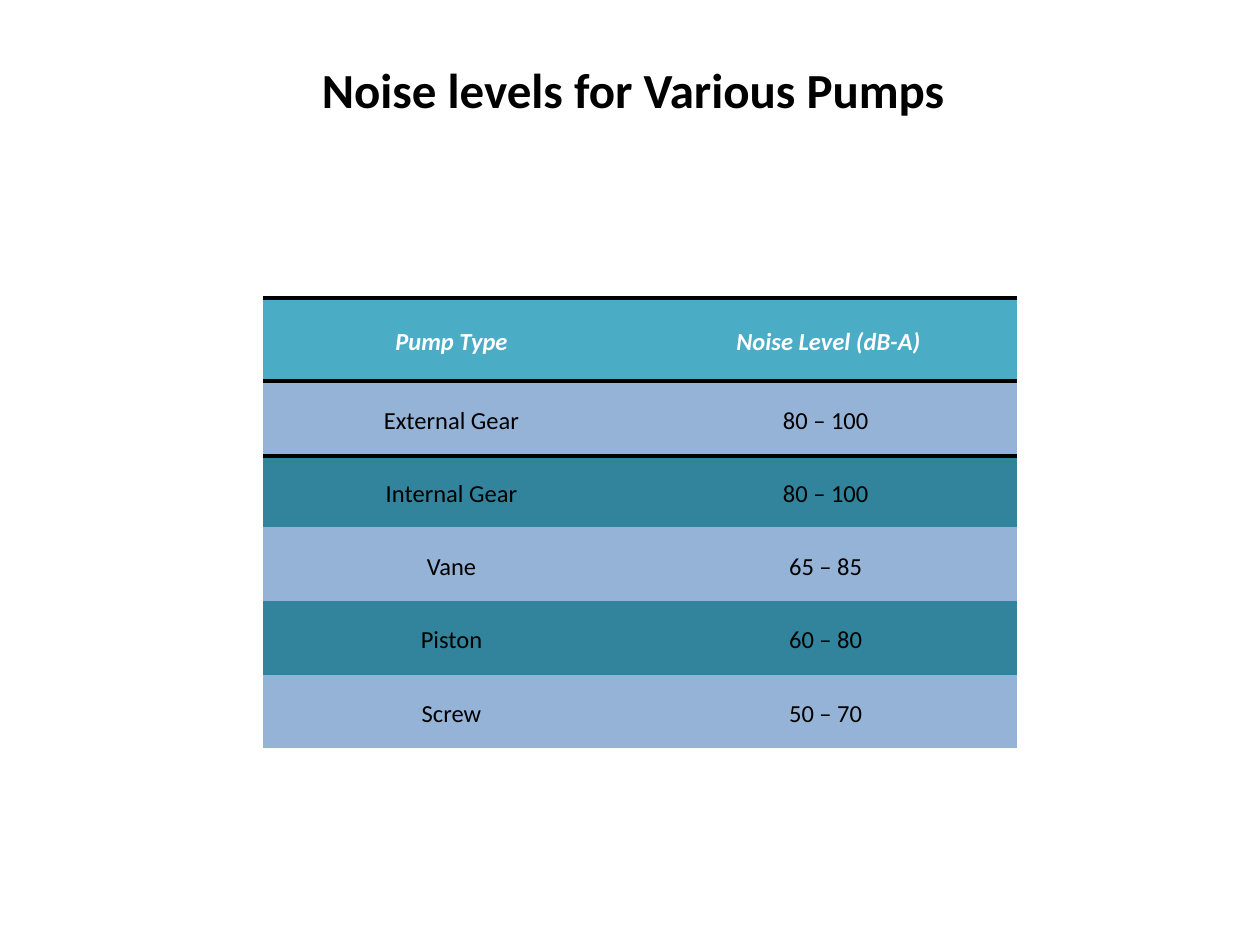
from lxml.etree import SubElement
from pptx import Presentation
from pptx.dml.color import RGBColor
from pptx.enum.text import MSO_ANCHOR, PP_ALIGN
from pptx.oxml.ns import qn
from pptx.util import Pt

TITLE = "Noise levels for Various Pumps"
ROWS = [
    ("Pump Type", "Noise Level (dB-A)"),
    ("External Gear", "80 – 100 "),
    ("Internal Gear", "80 – 100 "),
    ("Vane", "65 – 85 "),
    ("Piston", "60 – 80 "),
    ("Screw", "50 – 70 "),
]
COLORS = {"header": "4BACC6", "odd": "95B3D7", "even": "31849B",
          "text": "000000", "header_text": "FFFFFF", "rule": "000000"}
TITLE_BOX = (66, 26, 1134, 126)
TABLE_LEFT, TABLE_TOP, COL_WIDTH = 263, 298, 377
ROW_HEIGHTS = [83, 75, 71, 74, 74, 73]
CELL_FORMAT = {"margin_left": 9, "margin_right": 9, "margin_top": 1, "margin_bottom": 0}
RULE_WIDTH = Pt(2.25)
NO_STYLE = "{2D5ABB26-0587-4C30-8999-92F81FD0307C}"


def px(n):
    return round(n * 914400 / 126)


def set_attrs(obj, values):
    for name, value in values.items():
        setattr(obj, name, value)


def format_text(tf, color, size, bold=False, italic=False):
    p = tf.paragraphs[0]
    p.alignment = PP_ALIGN.CENTER
    font = p.runs[0].font
    set_attrs(font, {"name": "Calibri", "size": Pt(size), "bold": bold, "italic": italic})
    font.color.rgb = RGBColor.from_string(COLORS[color])
    return p


def add_rule(cell, side):
    """Draw a cell border; side is lnT or lnB."""
    ln = SubElement(cell._tc.get_or_add_tcPr(), qn(f"a:{side}"), w=str(RULE_WIDTH))
    SubElement(SubElement(ln, qn("a:solidFill")), qn("a:srgbClr"), val=COLORS["rule"])


def fill_cell(cell, text, row):
    header = row == 0
    for side in {0: ("lnT", "lnB"), 1: ("lnT",)}.get(row, ()):
        add_rule(cell, side)
    band = "header" if header else "odd" if row % 2 else "even"
    cell.fill.solid()
    cell.fill.fore_color.rgb = RGBColor.from_string(COLORS[band])
    set_attrs(cell, {name: px(n) for name, n in CELL_FORMAT.items()})
    cell.vertical_anchor = MSO_ANCHOR.MIDDLE
    cell.text = text
    p = format_text(cell.text_frame, "header_text" if header else "text", 14, header, header)
    p.line_spacing = 1.15


def main():
    prs = Presentation()
    set_attrs(prs, {"slide_width": px(1260), "slide_height": px(945)})
    s = prs.slides.add_slide(prs.slide_layouts[5])

    title = s.shapes.title
    set_attrs(title, dict(zip(("left", "top", "width", "height"), map(px, TITLE_BOX))))
    tf = title.text_frame
    tf.text = TITLE
    tf.vertical_anchor = MSO_ANCHOR.MIDDLE
    format_text(tf, "text", 28, bold=True)

    cols = len(ROWS[0])
    frame = s.shapes.add_table(len(ROWS), cols, px(TABLE_LEFT), px(TABLE_TOP),
                               px(cols * COL_WIDTH), px(sum(ROW_HEIGHTS)))
    table = frame.table
    table._tbl.tblPr.find(qn("a:tableStyleId")).text = NO_STYLE
    for col in table.columns:
        col.width = px(COL_WIDTH)
    for i, (texts, height) in enumerate(zip(ROWS, ROW_HEIGHTS)):
        table.rows[i].height = px(height)
        for cell, text in zip(table.rows[i].cells, texts):
            fill_cell(cell, text, i)

    prs.save("out.pptx")


if __name__ == "__main__":
    main()
